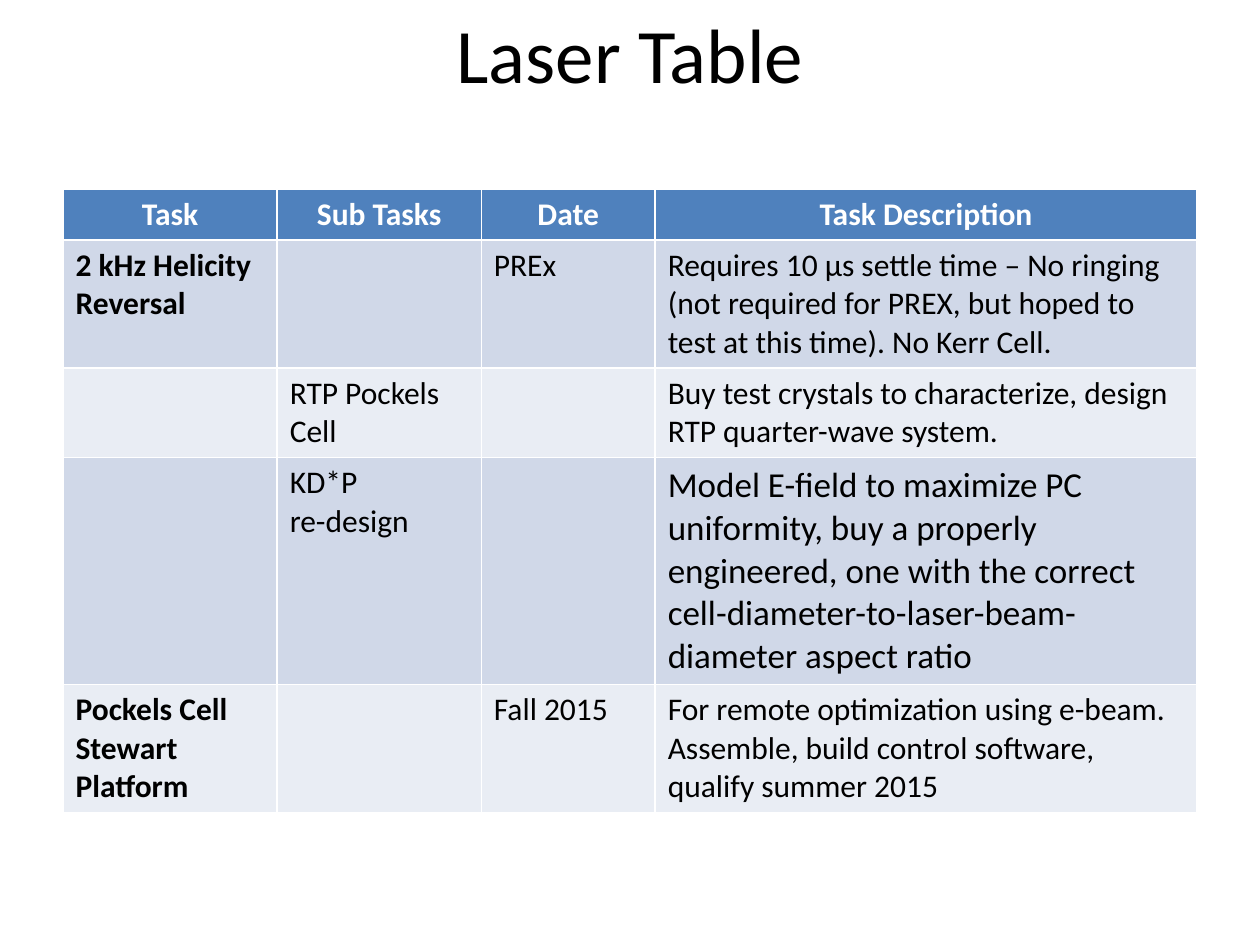
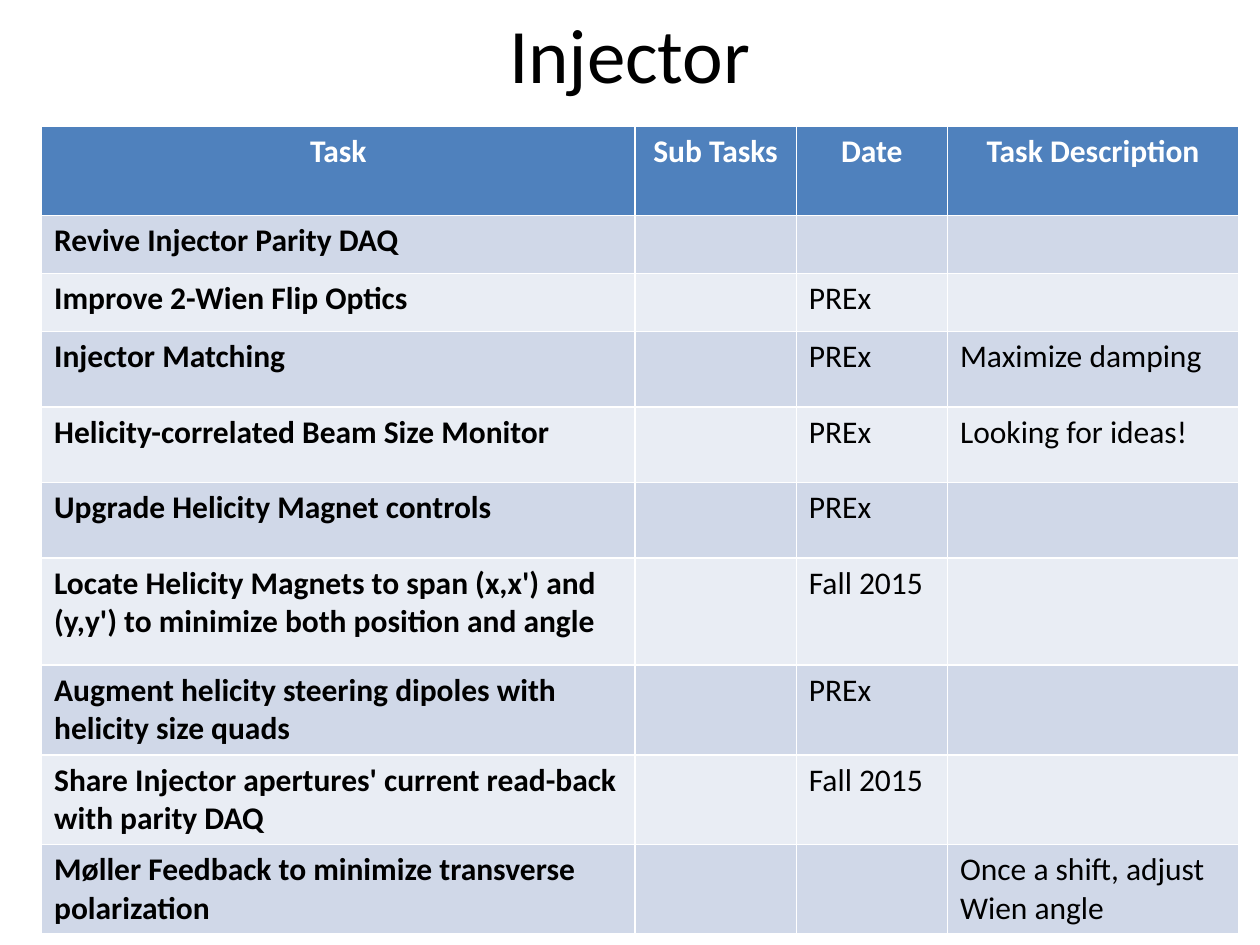
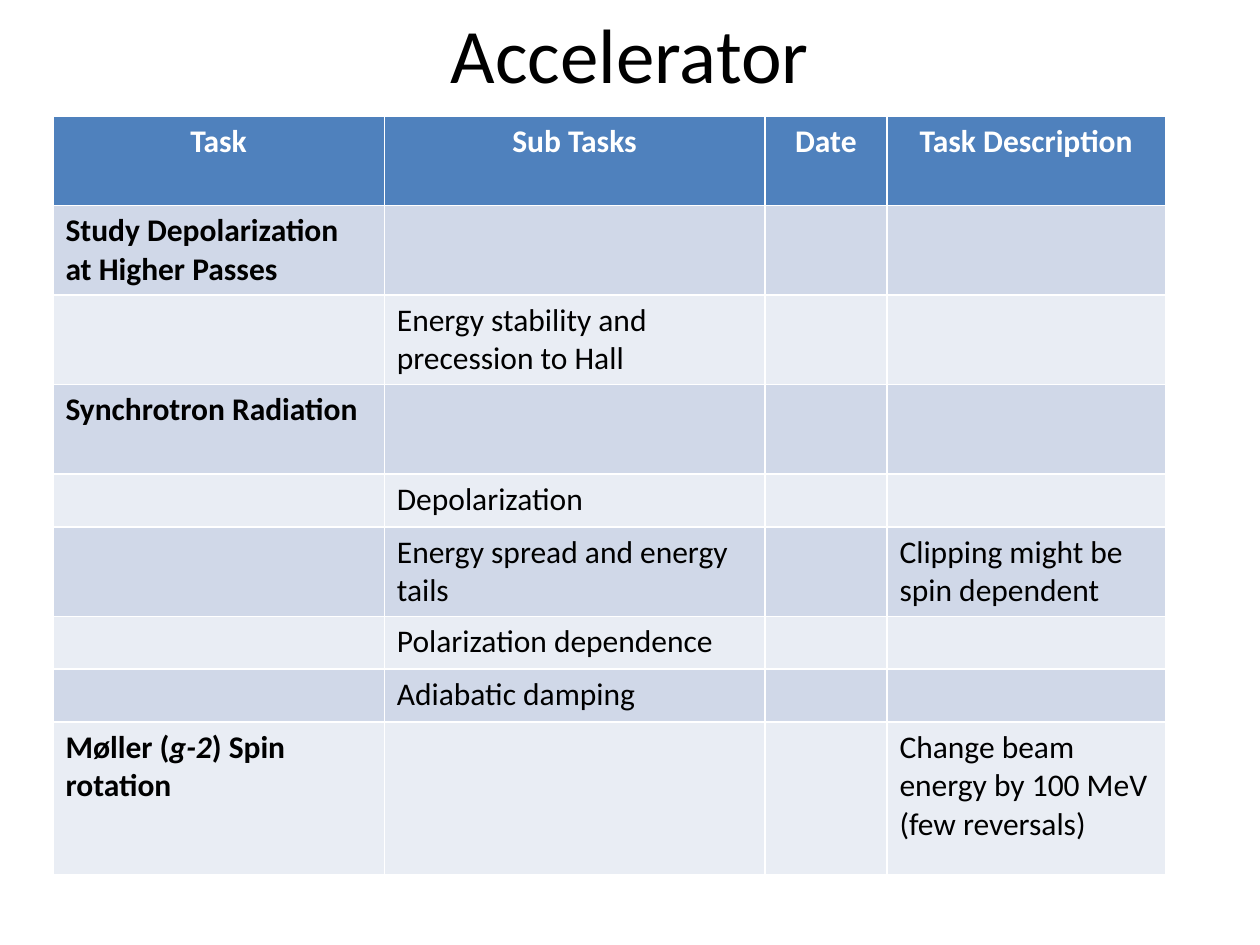
from pptx import Presentation
from pptx.dml.color import RGBColor
from pptx.enum.text import MSO_ANCHOR, PP_ALIGN
from pptx.util import Inches, Pt

FONT = "Calibri"
BLACK = RGBColor(0x00, 0x00, 0x00)
WHITE = RGBColor(0xFF, 0xFF, 0xFF)
HEADER_BLUE = RGBColor(0x4F, 0x81, 0xBD)
BANDS = (RGBColor(0xD0, 0xD8, 0xE8), RGBColor(0xE9, 0xED, 0xF4))

BODY_SIZE = 18
TITLE_BOX = (0.5, 0, 9, 0.83)
HEADINGS = ("Task", "Sub Tasks", "Date", "Task Description")

# A line break starts a new paragraph; underscores enclose italic text.
# Each row is its height followed by its four cells.
TASK_SLIDES = [
    {
        "title": "Laser Table",
        "position": (0.5, 1.5),
        "columns": (1.7, 1.62, 1.38, 4.3),
        "header_height": 0.4,
        "sizes": {(3, 3): 20},
        "rows": [
            (1.01, "2 kHz Helicity Reversal", "", "PREx",
             "Requires 10 µs settle time – No ringing\n"
             "(not required for PREX, but hoped to test at this time). No Kerr Cell."),
            (0.71, "", "RTP Pockels Cell", "",
             "Buy test crystals to characterize, design RTP quarter-wave system."),
            (1.8, "", "KD*P\nre-design", "",
             "Model E-field to maximize PC uniformity, buy a properly engineered, one with "
             "the correct cell-diameter-to-laser-beam-diameter aspect ratio"),
            (1.01, "Pockels Cell Stewart Platform", "", "Fall 2015",
             "For remote optimization using e-beam.\n"
             "Assemble, build control software, qualify summer 2015"),
        ],
    },
    {
        "title": "Injector",
        "position": (0.33, 1),
        "columns": (4.71, 1.28, 1.2, 2.31),
        "header_height": 0.71,
        "rows": [
            (0.46, "Revive Injector Parity DAQ", "", "", ""),
            (0.46, "Improve 2-Wien Flip Optics", "", "PREx", ""),
            (0.6, "Injector Matching", "", "PREx", "Maximize damping"),
            (0.6, "Helicity-correlated Beam Size Monitor", "", "PREx", "Looking for ideas!"),
            (0.6, "Upgrade Helicity Magnet controls", "", "PREx", ""),
            (0.85, "Locate Helicity Magnets to span (x,x') and (y,y') to minimize both "
             "position and angle", "", "Fall 2015", ""),
            (0.71, "Augment helicity steering dipoles with helicity size quads", "", "PREx", ""),
            (0.71, "Share Injector apertures' current read-back with parity DAQ", "",
             "Fall 2015", ""),
            (0.71, "Møller Feedback to minimize transverse polarization", "", "",
             "Once a shift, adjust Wien angle"),
        ],
    },
    {
        "title": "Accelerator",
        "position": (0.42, 0.92),
        "columns": (2.63, 3.02, 0.97, 2.21),
        "header_height": 0.71,
        "rows": [
            (0.71, "Study Depolarization at Higher Passes", "", "", ""),
            (0.71, "", "Energy stability and precession to Hall", "", ""),
            (0.71, "Synchrotron Radiation", "", "", ""),
            (0.42, "", "Depolarization", "", ""),
            (0.71, "", "Energy spread and energy tails", "", "Clipping might be spin dependent"),
            (0.42, "", "Polarization dependence", "", ""),
            (0.42, "", "Adiabatic damping", "", ""),
            (1.21, "Møller (_g-2_) Spin rotation", "", "",
             "Change beam energy by 100 MeV\n(few reversals)"),
        ],
    },
]


def write_text(text_frame, text, size=BODY_SIZE, color=BLACK, bold=False, align=PP_ALIGN.LEFT):
    for index, line in enumerate(text.split("\n")):
        paragraph = text_frame.add_paragraph() if index else text_frame.paragraphs[0]
        paragraph.alignment = align
        for piece_index, piece in enumerate(line.split("_")):
            run = paragraph.add_run()
            run.text = piece
            run.font.name = FONT
            run.font.size = Pt(size)
            run.font.color.rgb = color
            run.font.bold = bold
            run.font.italic = piece_index % 2 == 1


def fill_cell(cell, fill_color, text, **text_format):
    cell.fill.solid()
    cell.fill.fore_color.rgb = fill_color
    if text:
        write_text(cell.text_frame, text, **text_format)


def add_title(slide, text):
    title = slide.shapes.title
    title.left, title.top, title.width, title.height = map(Inches, TITLE_BOX)
    title.text_frame.vertical_anchor = MSO_ANCHOR.MIDDLE
    write_text(title.text_frame, text, size=44, align=PP_ALIGN.CENTER)


def add_task_table(slide, position, columns, header_height, rows, sizes):
    heights = [header_height] + [row[0] for row in rows]
    left, top = position
    table = slide.shapes.add_table(
        len(heights), len(columns),
        Inches(left), Inches(top), Inches(sum(columns)), Inches(sum(heights)),
    ).table
    for column, width in zip(table.columns, columns):
        column.width = Inches(width)
    for table_row, height in zip(table.rows, heights):
        table_row.height = Inches(height)

    for column_index, heading in enumerate(HEADINGS):
        fill_cell(table.cell(0, column_index), HEADER_BLUE, heading,
                  color=WHITE, bold=True, align=PP_ALIGN.CENTER)
    for row_index, (_, *texts) in enumerate(rows, start=1):
        band = BANDS[(row_index - 1) % 2]
        for column_index, text in enumerate(texts):
            fill_cell(table.cell(row_index, column_index), band, text,
                      size=sizes.get((row_index, column_index), BODY_SIZE),
                      bold=column_index == 0)


def main():
    presentation = Presentation()
    presentation.slide_width = Inches(10)
    presentation.slide_height = Inches(7.5)
    title_only = presentation.slide_layouts.get_by_name("Title Only")
    for content in TASK_SLIDES:
        slide = presentation.slides.add_slide(title_only)
        add_title(slide, content["title"])
        add_task_table(slide, content["position"], content["columns"],
                       content["header_height"], content["rows"], content.get("sizes", {}))
    presentation.save("out.pptx")


if __name__ == "__main__":
    main()
